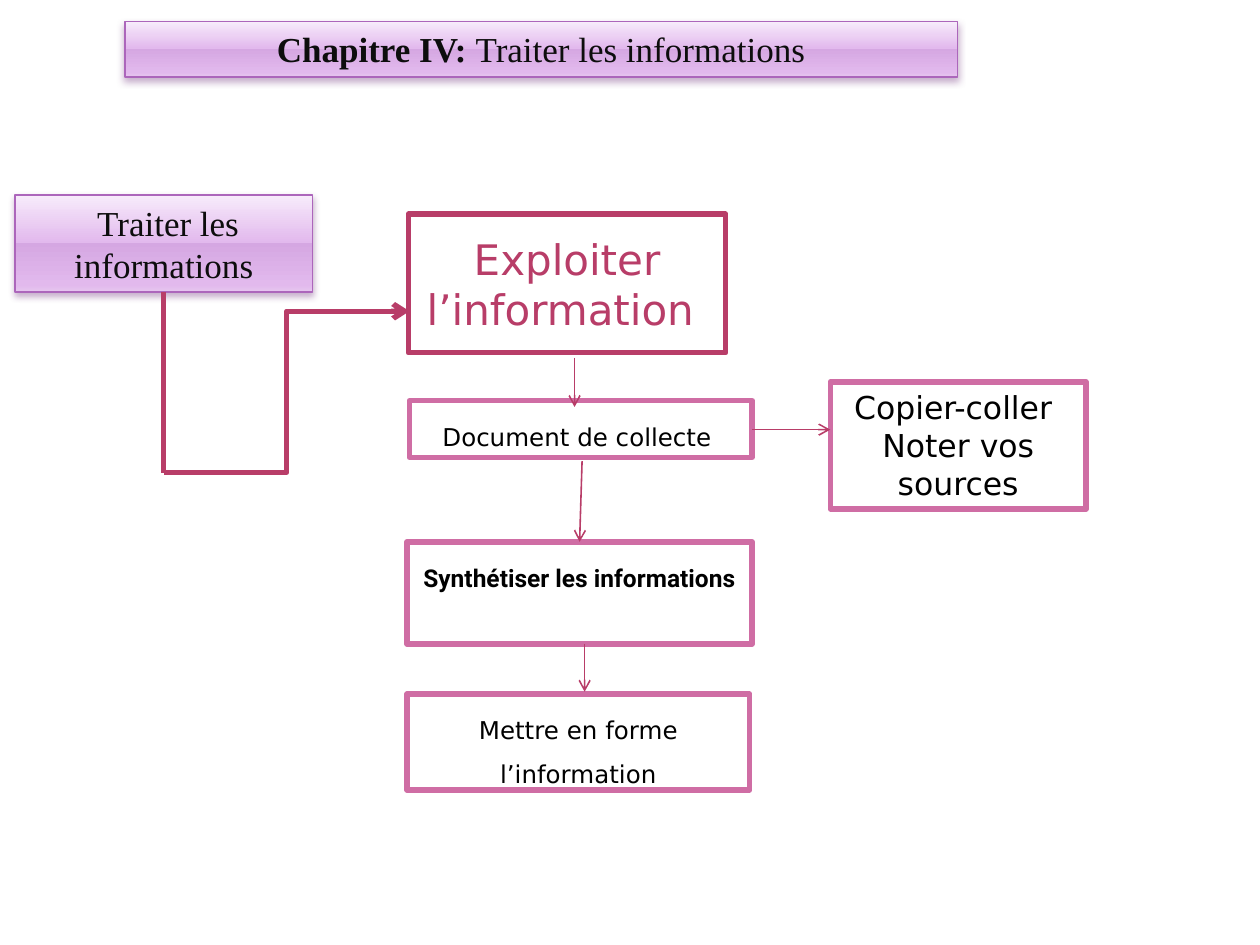
import pptx
import pptx.dml.color
import pptx.enum.shapes
import pptx.enum.text
import pptx.oxml
import pptx.oxml.ns
import pptx.util
from pptx.util import Inches

NS = pptx.oxml.ns.nsdecls("a")
RASPBERRY, PINK, LILAC = "B83D68", "CF6DA4", "AC66BB"
LILAC_STOPS = [(0, "F7EBFB"), (49, "E2B9ED"), (49, "D5A7E2"),
               (92, "E2B9ED"), (100, "E6C6EF")]
HEADING = {"size": pptx.util.Pt(20), "name": "Times New Roman"}
MAIN_STEP = {"size": pptx.util.Pt(24), "name": "DejaVu Sans"}
STEP = {"size": pptx.util.Pt(14), "name": "DejaVu Sans"}
BOLD_STEP = {"size": pptx.util.Pt(14), "name": "Roboto", "bold": True}
ADVICE = {"size": pptx.util.Pt(18), "name": "DejaVu Sans"}


def rgb(value):
    return pptx.dml.color.RGBColor.from_string(value)


def set_line(line, color, width):
    line.color.rgb = rgb(color)
    line.width = pptx.util.Pt(width)


def write_text(shape, paragraphs, font_values, color, anchor="TOP", spacing=None):
    """Fill the shape with paragraphs, each a list of (text, extra font values)."""
    frame = shape.text_frame
    frame.word_wrap = True
    frame.auto_size = pptx.enum.text.MSO_AUTO_SIZE.NONE
    frame.vertical_anchor = getattr(pptx.enum.text.MSO_ANCHOR, anchor)
    for index, runs in enumerate(paragraphs):
        paragraph = frame.add_paragraph() if index else frame.paragraphs[0]
        paragraph.alignment = pptx.enum.text.PP_ALIGN.CENTER
        if spacing:
            paragraph.line_spacing = spacing
        for text, extra in runs:
            run = paragraph.add_run()
            run.text = text
            for name, value in {**font_values, **extra}.items():
                setattr(run.font, name, value)
            run.font.color.rgb = rgb(color)


def add_box(slide, place):
    box = slide.shapes.add_shape(pptx.enum.shapes.MSO_SHAPE.RECTANGLE,
                                 *map(Inches, place))
    box.shadow.inherit = False
    return box


def style_heading(heading, bold_text, plain_text):
    """Give a heading its lilac gradient, soft shadow and two-part text."""
    heading.fill.gradient()
    heading.fill.gradient_angle = 270
    properties = heading._element.spPr
    stops = properties.find(".//" + pptx.oxml.ns.qn("a:gsLst"))
    for stop in list(stops):
        stops.remove(stop)
    for position, color in LILAC_STOPS:
        stops.append(pptx.oxml.parse_xml(
            f'<a:gs {NS} pos="{position * 1000}"><a:srgbClr val="{color}"/></a:gs>'))
    set_line(heading.line, LILAC, 0.9)
    heading.shadow.inherit = False
    properties.find(pptx.oxml.ns.qn("a:effectLst")).append(pptx.oxml.parse_xml(
        f'<a:outerShdw {NS} blurRad="50800" dist="25400" dir="5400000" rotWithShape="0">'
        '<a:srgbClr val="6E307B"><a:alpha val="38000"/></a:srgbClr></a:outerShdw>'))
    write_text(heading, [[(bold_text, {"bold": True}), (plain_text, {"bold": False})]],
               HEADING, "0D0D0D")


def add_step(slide, place, lines, font_values, border=PINK, color="000000", **layout):
    step = add_box(slide, place)
    step.fill.solid()
    step.fill.fore_color.rgb = rgb("FFFFFF")
    set_line(step.line, border, 3.15)
    write_text(step, [[(line, {})] for line in lines], font_values, color, **layout)


def add_link(slide, start, end, width=0.9, kind="STRAIGHT", arrow=True):
    link = slide.shapes.add_connector(getattr(pptx.enum.shapes.MSO_CONNECTOR, kind),
                                      *map(Inches, start + end))
    set_line(link.line, RASPBERRY, width)
    if arrow:
        link.line._get_or_add_ln().append(
            pptx.oxml.parse_xml(f'<a:tailEnd {NS} type="arrow"/>'))
    link._element.spPr.append(pptx.oxml.parse_xml(f"<a:effectLst {NS}/>"))


def main():
    deck = pptx.Presentation()
    deck.slide_width, deck.slide_height = Inches(10), Inches(7.5)
    slide = deck.slides.add_slide(deck.slide_layouts[5])

    chapter = slide.shapes.title
    chapter.left, chapter.top, chapter.width, chapter.height = map(
        Inches, (0.99, 0.17, 6.61, 0.44))
    style_heading(chapter, "Chapitre IV: ", "Traiter les informations")
    topic = add_box(slide, (0.12, 1.55, 2.36, 0.77))
    style_heading(topic, " ", "Traiter les informations")

    add_link(slide, (1.3, 2.32), (1.3, 3.75), width=3, arrow=False)
    add_link(slide, (1.3, 3.75), (3.25, 2.47), width=3, kind="ELBOW")

    add_step(slide, (3.24, 1.7, 2.52, 1.1), ["Exploiter l’information "], MAIN_STEP,
             border=RASPBERRY, color=RASPBERRY, anchor="MIDDLE")
    add_step(slide, (3.25, 3.18, 2.72, 0.45), ["Document de collecte "], STEP, spacing=1.5)
    add_step(slide, (6.59, 3.03, 2.03, 1.01), ["Copier-coller ", "Noter vos sources"], ADVICE)
    add_step(slide, (3.23, 4.3, 2.74, 0.81), ["Synthétiser les informations"],
             BOLD_STEP, spacing=1.5)
    add_step(slide, (3.23, 5.51, 2.72, 0.76), ["Mettre en forme l’information"],
             STEP, spacing=1.5)

    for start, end in [((4.56, 2.84), (4.56, 3.23)), ((4.62, 3.66), (4.6, 4.3)),
                       ((4.64, 5.11), (4.64, 5.49)), ((5.97, 3.41), (6.59, 3.41))]:
        add_link(slide, start, end)

    deck.save("out.pptx")


if __name__ == "__main__":
    main()
